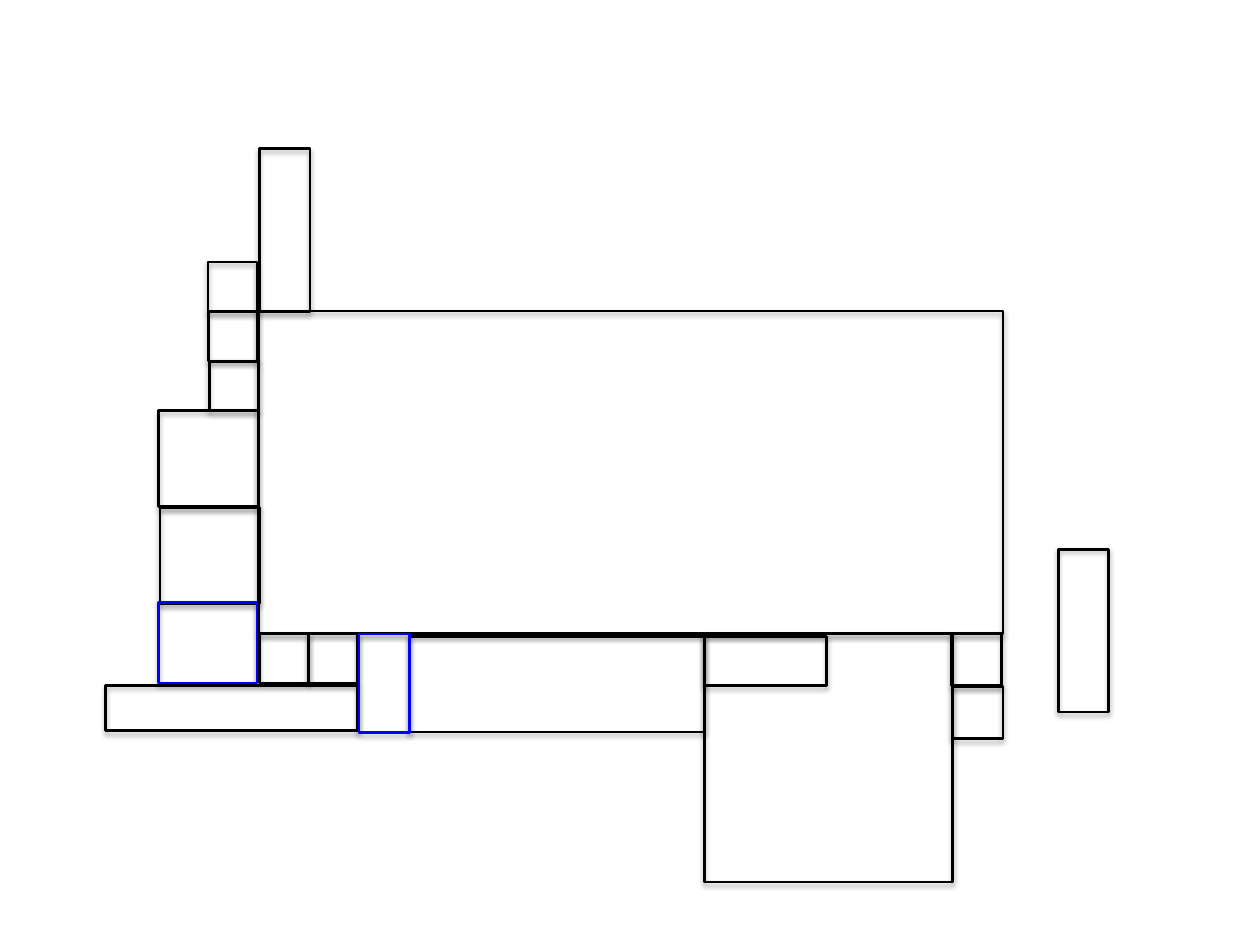
from lxml.etree import SubElement
from pptx import Presentation
from pptx.dml.color import RGBColor
from pptx.enum.shapes import MSO_SHAPE
from pptx.oxml.ns import qn
from pptx.util import Pt

THEME = {
    "black": "000000",
    "blue": "0000FF",
    "line": 1.5,
    "shade": {"color": "000000", "alpha": 35, "blur": 3.1, "dist": 1.8, "angle": 90},
}

# Runs of equal rooms: left, top, width, height, count, step right, step down, colour
ROOMS = [
    (147.6, 177.8, 425.5, 184.3, 1, 0, 0, "black"),    # main hall
    (604.8, 313.9, 28.8, 92.9, 1, 0, 0, "black"),      # detached block
    (543.6, 362.2, 28.8, 29.5, 2, 0.7, 30.2, "black"),  # right corner pair
    (402.5, 362.2, 141.8, 141.8, 1, 0, 0, "black"),    # lower square
    (118.8, 149.8, 28.1, 28.1, 3, 0.4, 28.4, "black"),  # small left column
    (90.7, 234.7, 56.9, 54.7, 2, 0.7, 55.4, "black"),  # large left column
    (234, 363.6, 168.5, 54.7, 1, 0, 0, "black"),       # lower strip
    (148.3, 85, 28.8, 92.9, 1, 0, 0, "black"),         # upper tower
    (402.5, 363.6, 69.8, 28.1, 1, 0, 0, "black"),      # inset in lower square
    (148.3, 362.2, 28.1, 28.1, 2, 28.1, 0, "black"),   # pair under hall
    (90.7, 344.2, 56.2, 46.1, 1, 0, 0, "blue"),        # blue room, left
    (60.5, 391.7, 144, 25.9, 1, 0, 0, "black"),        # lower left strip
    (205.2, 362.2, 28.8, 56.2, 1, 0, 0, "blue"),       # blue room, centre
]


def add_shade(shape, color, alpha, blur, dist, angle):
    """Give the shape a soft outer shadow."""
    shape.shadow.inherit = False
    effects = shape.element.spPr.find(qn("a:effectLst"))
    outer = SubElement(effects, qn("a:outerShdw"), {
        "blurRad": str(Pt(blur)), "dist": str(Pt(dist)),
        "dir": str(angle * 60000), "rotWithShape": "0"})
    tint = SubElement(outer, qn("a:srgbClr"), val=color)
    SubElement(tint, qn("a:alpha"), val=str(alpha * 1000))


def add_room(slide, left, top, width, height, color):
    room = slide.shapes.add_shape(
        MSO_SHAPE.RECTANGLE, Pt(left), Pt(top), Pt(width), Pt(height))
    room.fill.background()
    room.line.color.rgb = RGBColor.from_string(THEME[color])
    room.line.width = Pt(THEME["line"])
    add_shade(room, **THEME["shade"])


def main():
    deck = Presentation()
    deck.slide_width, deck.slide_height = Pt(720), Pt(540)
    slide = deck.slides.add_slide(deck.slide_layouts[6])

    # Floor plan, back to front
    for left, top, width, height, count, right, down, color in ROOMS:
        for i in range(count):
            add_room(slide, left + i * right, top + i * down, width, height, color)

    deck.save("out.pptx")


if __name__ == "__main__":
    main()
